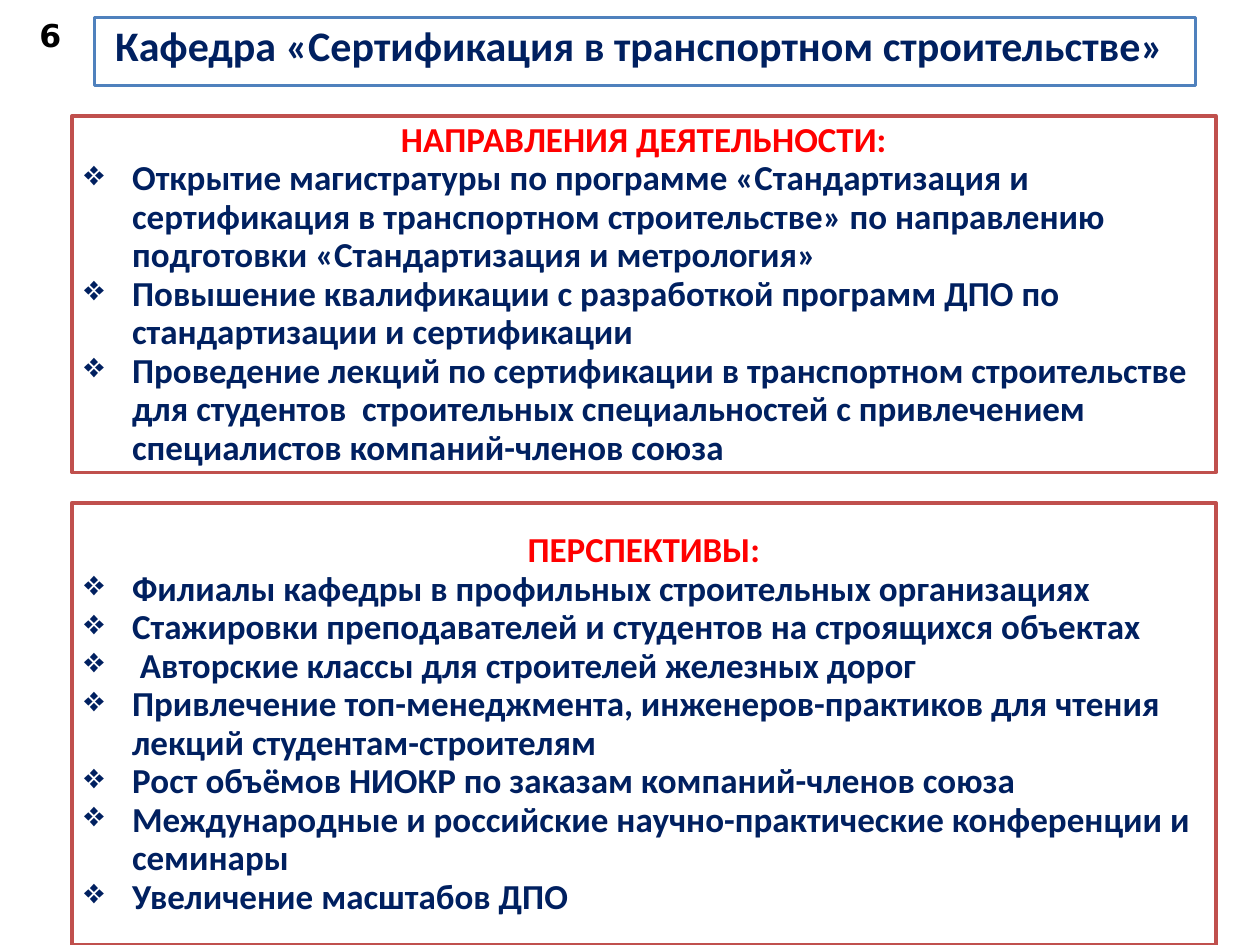
from lxml.etree import SubElement
from pptx import Presentation
from pptx.dml.color import RGBColor
from pptx.enum.shapes import MSO_SHAPE
from pptx.enum.text import MSO_ANCHOR, MSO_AUTO_SIZE, PP_ALIGN
from pptx.oxml.ns import qn
from pptx.util import Inches, Pt

WIDE, HIGH = 10, 7.5
NAVY, RED, BLUE, BRICK = "002060", "FF0000", "4F81BD", "C0504D"
LEFT, SPAN = 0.57, 9.08
INDENT = 0.38

GOALS = [
    "Открытие магистратуры по программе «Стандартизация и сертификация в транспортном "
    "строительстве» по направлению подготовки «Стандартизация и метрология»",
    "Повышение квалификации с разработкой программ ДПО по стандартизации и сертификации",
    "Проведение лекций по сертификации в транспортном строительстве для студентов  "
    "строительных специальностей с привлечением специалистов компаний-членов союза",
]
PLANS = [
    "Филиалы кафедры в профильных строительных организациях",
    "Стажировки преподавателей и студентов на строящихся объектах",
    " Авторские классы для строителей железных дорог",
    "Привлечение топ-менеджмента, инженеров-практиков для чтения лекций студентам-строителям",
    "Рост объёмов НИОКР по заказам компаний-членов союза",
    "Международные и российские научно-практические конференции и семинары",
    "Увеличение масштабов ДПО",
]


def color(code):
    return RGBColor.from_string(code)


def place(shape, box):
    shape.left, shape.top, shape.width, shape.height = map(Inches, box)


def outline(shape, edge):
    shape.fill.solid()
    shape.fill.fore_color.rgb = color("FFFFFF")
    shape.line.color.rgb = color(edge)
    shape.line.width = Pt(2)


def set_frame(frame):
    frame.word_wrap = True
    frame.auto_size = MSO_AUTO_SIZE.NONE
    frame.vertical_anchor = MSO_ANCHOR.MIDDLE


def write(para, text, size=20, ink=NAVY, font="Calibri", align=PP_ALIGN.CENTER, lead=None):
    para.alignment = align
    if lead:
        para.line_spacing = Pt(lead)
    run = para.add_run()
    run.text = text
    run.font.size, run.font.name, run.font.bold = Pt(size), font, True
    run.font.color.rgb = color(ink)


def bullet(para):
    props = para._p.get_or_add_pPr()
    props.set("marL", str(Inches(INDENT)))
    props.set("indent", str(-Inches(INDENT)))
    SubElement(props, qn("a:buChar"), char="❖")


def add_title(slide, box, text):
    title = slide.shapes.title
    place(title, box)
    outline(title, BLUE)
    frame = title.text_frame
    set_frame(frame)
    frame.margin_left, frame.margin_right = Inches(0.06), Inches(0.15)
    frame.margin_top = frame.margin_bottom = Inches(0.03)
    write(frame.paragraphs[0], text, size=24, lead=20.8)


def add_number(slide, box, text):
    frame = slide.shapes.add_textbox(*map(Inches, box)).text_frame
    set_frame(frame)
    write(frame.paragraphs[0], text, size=18, ink="000000", font="DejaVu Sans")


def add_panel(slide, box, head, items):
    """Framed box with a red heading over a bulleted list."""
    panel = slide.shapes.add_shape(MSO_SHAPE.RECTANGLE, *map(Inches, box))
    panel.shadow.inherit = False
    outline(panel, BRICK)
    frame = panel.text_frame
    set_frame(frame)
    write(frame.paragraphs[0], head, ink=RED, lead=22)
    for item in items:
        para = frame.add_paragraph()
        write(para, item, align=PP_ALIGN.LEFT, lead=22)
        bullet(para)


def main():
    deck = Presentation()
    deck.slide_width, deck.slide_height = Inches(WIDE), Inches(HIGH)
    slide = deck.slides.add_slide(deck.slide_layouts[5])
    add_title(slide, (0.75, 0.14, 8.74, 0.54), "Кафедра «Сертификация в транспортном строительстве»")
    add_panel(slide, (LEFT, 0.92, SPAN, 2.83), "НАПРАВЛЕНИЯ ДЕЯТЕЛЬНОСТИ:", GOALS)
    add_number(slide, (0, 0.11, 0.8, 0.33), "6")
    add_panel(slide, (LEFT, 3.99, SPAN, HIGH - 3.99), "ПЕРСПЕКТИВЫ:", PLANS)
    deck.save("out.pptx")


if __name__ == "__main__":
    main()
